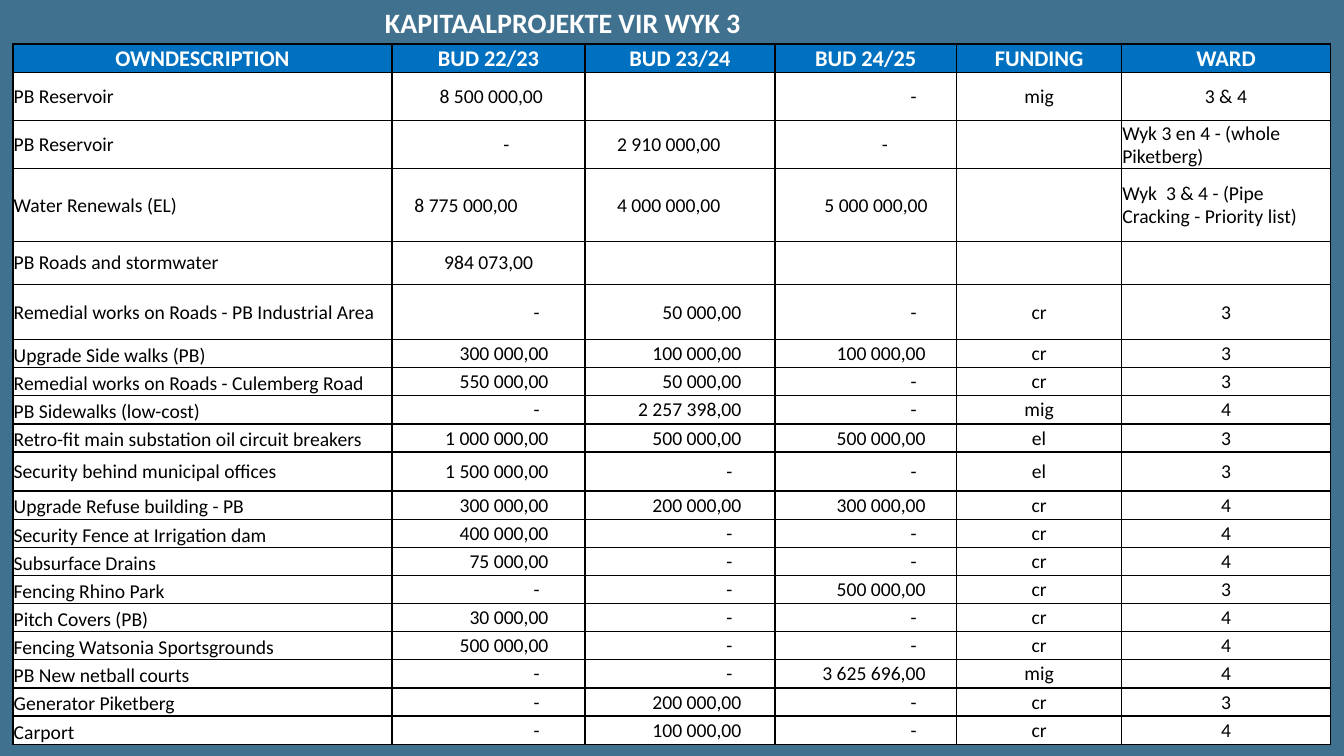
from lxml.etree import SubElement
from pptx import Presentation
from pptx.dml.color import RGBColor
from pptx.enum.text import MSO_ANCHOR, MSO_AUTO_SIZE, PP_ALIGN
from pptx.oxml.ns import qn
from pptx.util import Pt

TITLE = "KAPITAALPROJEKTE VIR WYK 3"
HEADER = ("OWNDESCRIPTION", "BUD 22/23", "BUD 23/24", "BUD 24/25", "FUNDING", "WARD")
LINE = 20.1
PROJECTS = [
    (34.7, "PB Reservoir", "8 500 000,00", "", "-", "mig", "3 & 4"),
    (34.4, "PB Reservoir", "-", "2 910 000,00", "-", "", "Wyk 3 en 4 - (whole Piketberg)"),
    (51.7, "Water Renewals (EL)", "8 775 000,00", "4 000 000,00", "5 000 000,00", "",
     "Wyk  3 & 4 - (Pipe Cracking - Priority list)"),
    (31, "PB Roads and stormwater", "984 073,00", "", "", "", ""),
    (39.3, "Remedial works on Roads - PB Industrial Area", "-", "50 000,00", "-", "cr", "3"),
    (LINE, "Upgrade Side walks (PB)", "300 000,00", "100 000,00", "100 000,00", "cr", "3"),
    (LINE, "Remedial works on Roads - Culemberg Road", "550 000,00", "50 000,00", "-", "cr", "3"),
    (LINE, "PB Sidewalks (low-cost)", "-", "2 257 398,00", "-", "mig", "4"),
    (LINE, "Retro-fit main substation oil circuit breakers",
     "1 000 000,00", "500 000,00", "500 000,00", "el", "3"),
    (27.8, "Security behind municipal offices", "1 500 000,00", "-", "-", "el", "3"),
    (LINE, "Upgrade Refuse building - PB", "300 000,00", "200 000,00", "300 000,00", "cr", "4"),
    (LINE, "Security Fence at Irrigation dam", "400 000,00", "-", "-", "cr", "4"),
    (LINE, "Subsurface Drains", "75 000,00", "-", "-", "cr", "4"),
    (LINE, "Fencing Rhino Park", "-", "-", "500 000,00", "cr", "3"),
    (LINE, "Pitch Covers (PB)", "30 000,00", "-", "-", "cr", "4"),
    (LINE, "Fencing Watsonia Sportsgrounds", "500 000,00", "-", "-", "cr", "4"),
    (LINE, "PB New netball courts", "-", "-", "3 625 696,00", "mig", "4"),
    (LINE, "Generator Piketberg", "-", "200 000,00", "-", "cr", "3"),
    (LINE, "Carport", "-", "100 000,00", "-", "cr", "4"),
]
COLUMNS = (270.7, 137.9, 135.8, 129.6, 118, 149)
AMOUNT_INSET = {1: 26, 2: 24, 3: 22}
DASH_EXTRA = 6.5
SPECIAL_INSET = {(1, 1): 30, (2, 1): 54, (2, 2): 39, (2, 3): 49,
                 (3, 1): 48, (3, 2): 39, (3, 3): 20.5, (4, 1): 37}
EDGE = 0.5

FONT = "Calibri"
BACKGROUND = RGBColor(0x40, 0x72, 0x90)
HEADER_BLUE = RGBColor(0x00, 0x70, 0xC0)
WHITE = RGBColor(0xFF, 0xFF, 0xFF)
BLACK = RGBColor(0x00, 0x00, 0x00)


def add_run(p, text, size, color, bold):
    r = p.add_run()
    r.text = text
    r.font.name = FONT
    r.font.size = Pt(size)
    r.font.bold = bold
    r.font.color.rgb = color


def add_borders(cell):
    tc_pr = cell._tc.get_or_add_tcPr()
    for index, side in enumerate(("lnL", "lnR", "lnT", "lnB")):
        line = SubElement(tc_pr, qn(f"a:{side}"), w=str(Pt(1)))
        fill = SubElement(line, qn("a:solidFill"))
        SubElement(fill, qn("a:srgbClr"), val=str(BLACK))
        tc_pr.insert(index, line)


def cell_layout(row, col, text, height):
    if row == 0:
        return PP_ALIGN.CENTER, EDGE
    if col in AMOUNT_INSET:
        usual = AMOUNT_INSET[col] + (DASH_EXTRA if text == "-" else 0)
        return PP_ALIGN.RIGHT, SPECIAL_INSET.get((row, col), usual)
    if col == 0 or text.startswith("Wyk"):
        return PP_ALIGN.LEFT, EDGE
    return PP_ALIGN.CENTER, EDGE


def fill_cell(cell, row, col, text, height):
    align, inset = cell_layout(row, col, text, height)
    cell.margin_left = cell.margin_top = Pt(EDGE)
    cell.margin_right = Pt(inset)
    cell.margin_bottom = Pt(0)
    low = row > 0 and col == 0 and height == LINE
    cell.vertical_anchor = MSO_ANCHOR.BOTTOM if low else MSO_ANCHOR.MIDDLE
    cell.fill.solid()
    cell.fill.fore_color.rgb = WHITE if row else HEADER_BLUE
    add_borders(cell)
    if text:
        p = cell.text_frame.paragraphs[0]
        p.alignment = align
        add_run(p, text, 14 if row else 16, BLACK if row else WHITE, row == 0)


prs = Presentation()
prs.slide_width, prs.slide_height = Pt(960), Pt(540)
s = prs.slides.add_slide(prs.slide_layouts[5])
s.background.fill.solid()
s.background.fill.fore_color.rgb = BACKGROUND

title = s.shapes.title
title.left, title.top, title.width, title.height = Pt(267.8), Pt(0), Pt(270.7), Pt(31.5)
tf = title.text_frame
tf.word_wrap = False
tf.auto_size = MSO_AUTO_SIZE.SHAPE_TO_FIT_TEXT
tf.vertical_anchor = MSO_ANCHOR.TOP
p = tf.paragraphs[0]
p.alignment = PP_ALIGN.LEFT
add_run(p, TITLE, 20, WHITE, True)

rows = [(LINE, *HEADER)] + PROJECTS
total_height = sum(row[0] for row in rows)
table = s.shapes.add_table(len(rows), len(COLUMNS), Pt(9.3), Pt(31.4),
                           Pt(sum(COLUMNS)), Pt(total_height)).table
table.horz_banding = False
for col, width in enumerate(COLUMNS):
    table.columns[col].width = Pt(width)
for row, (height, *texts) in enumerate(rows):
    table.rows[row].height = Pt(height)
    for col, text in enumerate(texts):
        fill_cell(table.cell(row, col), row, col, text, height)

prs.save("out.pptx")
